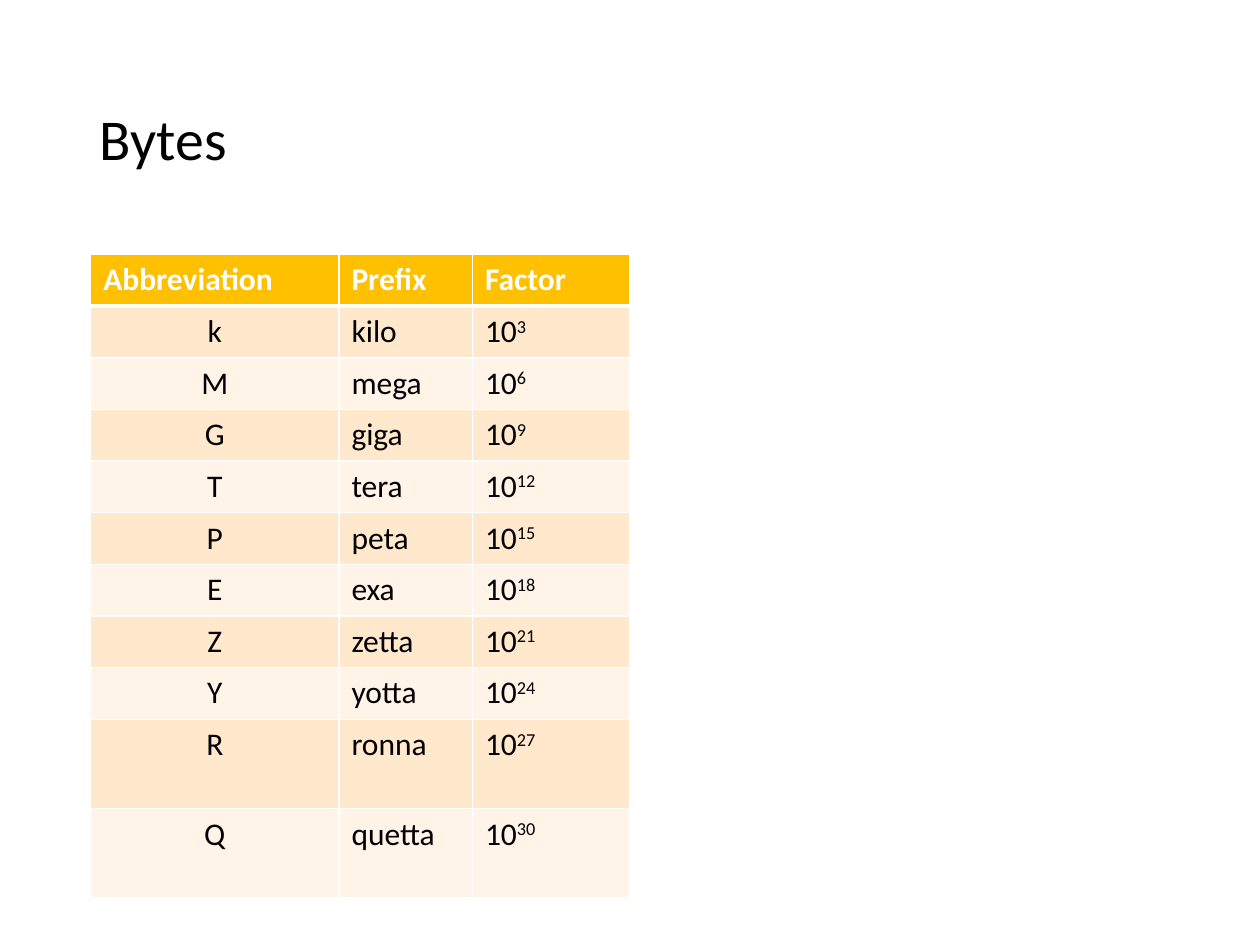
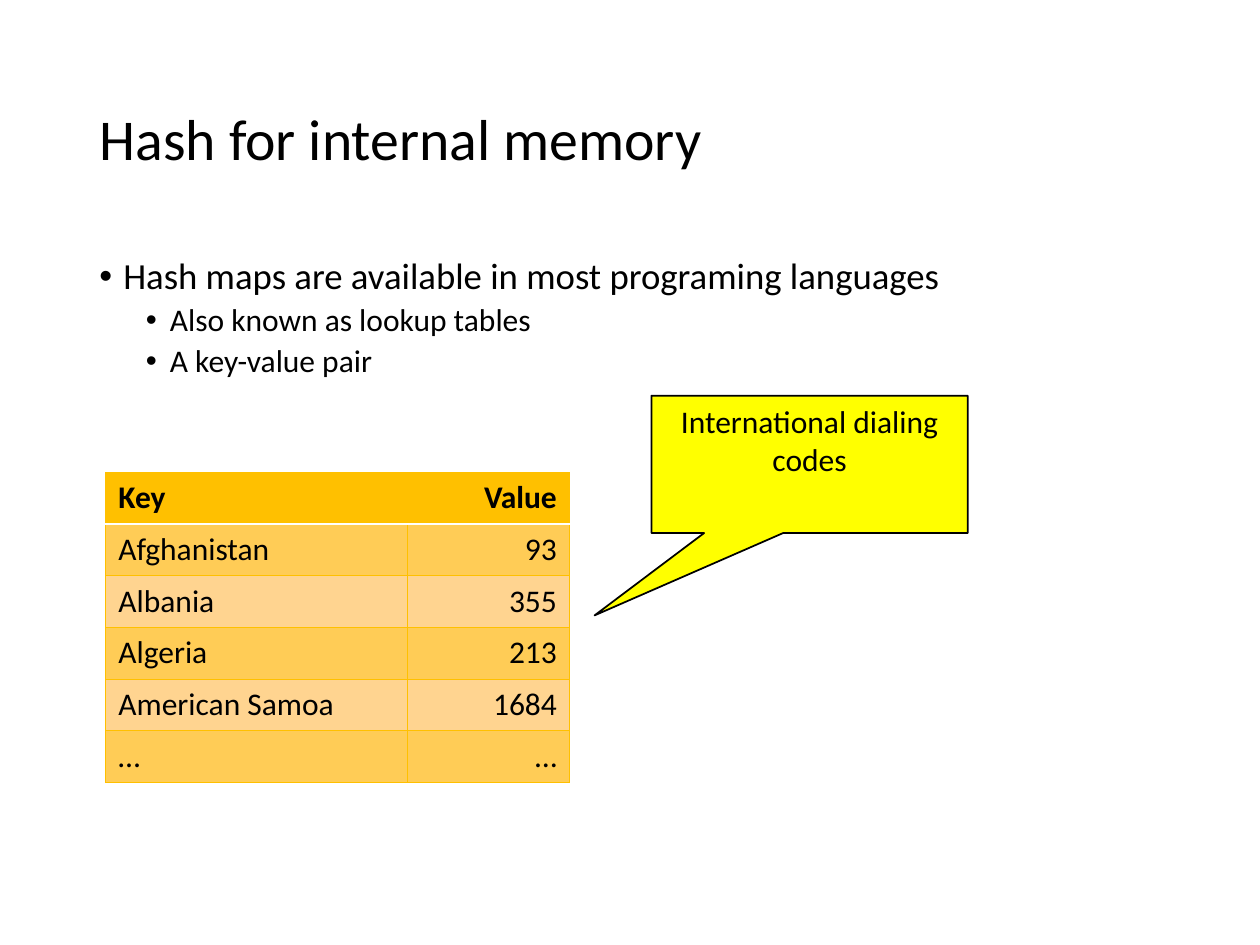
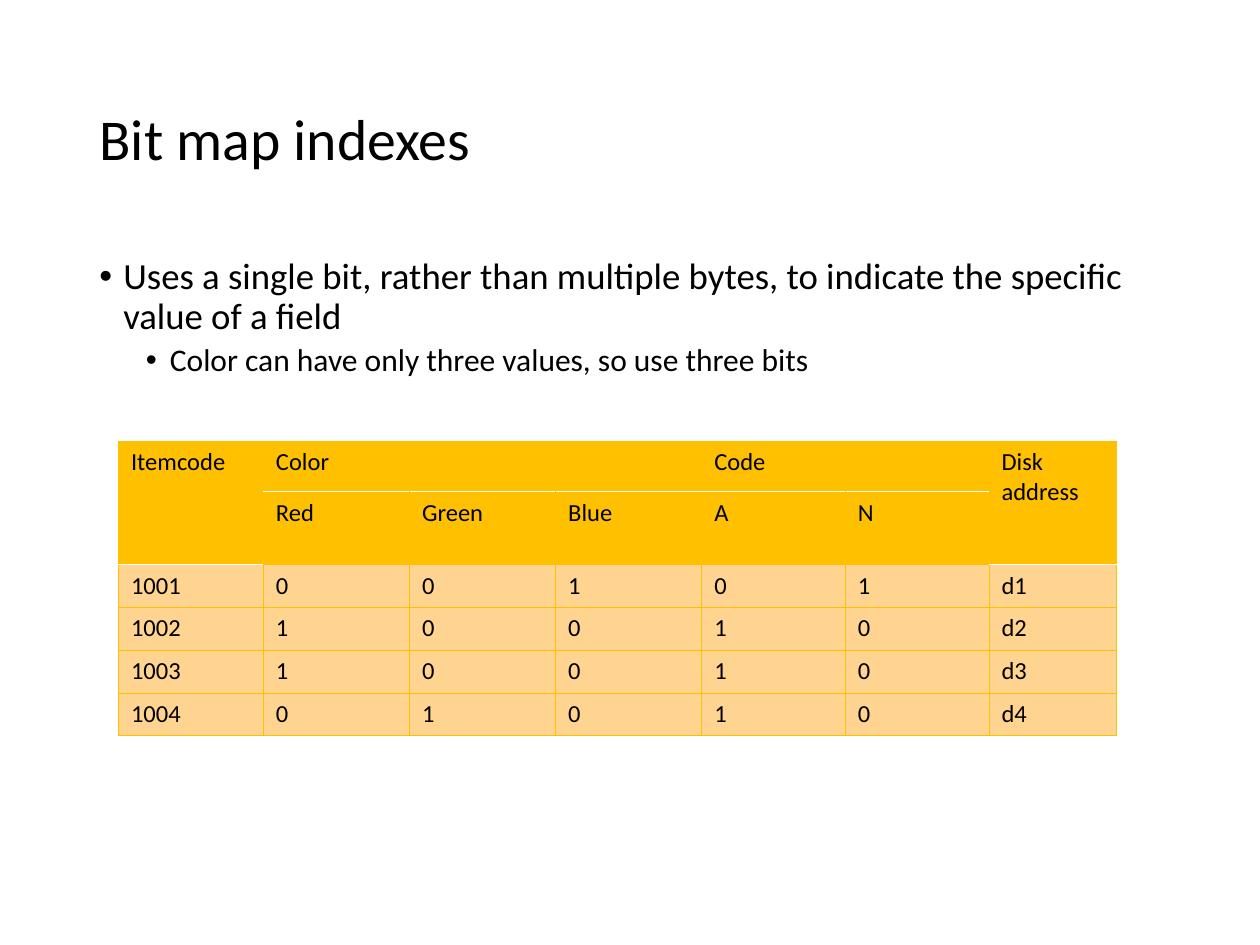
"""Build three slides on byte prefixes, hash maps and bit map indexes."""
import lxml.etree
import pptx
import pptx.dml.color
import pptx.enum.shapes
import pptx.enum.text
import pptx.oxml.ns
import pptx.util

Inches = pptx.util.Inches
Pt = pptx.util.Pt
RGBColor = pptx.dml.color.RGBColor
qn = pptx.oxml.ns.qn

FONT = "Calibri"
BLACK = RGBColor(0x00, 0x00, 0x00)
WHITE = RGBColor(0xFF, 0xFF, 0xFF)
YELLOW = RGBColor(0xFF, 0xFF, 0x00)
GOLD = RGBColor(0xFF, 0xC0, 0x00)
GOLD_BAND = RGBColor(0xFF, 0xCC, 0x56)
GOLD_TINT = RGBColor(0xFF, 0xD4, 0x90)
PEACH = RGBColor(0xFF, 0xE8, 0xCC)
PEACH_TINT = RGBColor(0xFF, 0xF4, 0xE7)

LEFT = pptx.enum.text.PP_ALIGN.LEFT
CENTER = pptx.enum.text.PP_ALIGN.CENTER
RIGHT = pptx.enum.text.PP_ALIGN.RIGHT

PREFIXES = ["kilo", "mega", "giga", "tera", "peta", "exa", "zetta", "yotta", "ronna", "quetta"]
SYMBOLS = "kMGTPEZYRQ"

SLIDES = [
    {
        "title": "Bytes",
        "bullets": [],
        "position": (0.72, 2.02),
        "widths": [1.97, 1.06, 1.25],
        "heights": [0.41] * 9 + [0.71] * 2,
        "rows": [["Abbreviation", "Prefix", "Factor"]]
        + [[symbol, prefix, f"10^{3 * power}"]
           for power, (symbol, prefix) in enumerate(zip(SYMBOLS, PREFIXES), 1)],
        "size": 18,
        "header_rows": 1,
        "header_color": WHITE,
        "header_bold": True,
        "header_alignments": [LEFT] * 3,
        "alignments": [CENTER, LEFT, LEFT],
        "bands": [PEACH, PEACH_TINT],
        "edge": (WHITE, 1),
        "rule": (WHITE, 3),
        "ruled_cells": [(0, column) for column in range(3)],
        "merges": [],
    },
    {
        "title": "Hash for internal memory",
        "bullets": [
            (0, "Hash maps are available in most programing languages"),
            (1, "Also known as lookup tables"),
            (1, "A key-value pair"),
        ],
        "position": (0.84, 3.75),
        "widths": [2.39, 1.29],
        "heights": [0.41] * 6,
        "rows": [
            ["Key", "Value"],
            ["Afghanistan", "93"],
            ["Albania", "355"],
            ["Algeria", "213"],
            ["American Samoa", "1684"],
            ["…", "…"],
        ],
        "size": 18,
        "header_rows": 1,
        "header_color": BLACK,
        "header_bold": True,
        "header_alignments": [LEFT, RIGHT],
        "alignments": [LEFT, RIGHT],
        "bands": [GOLD_BAND, GOLD_TINT],
        "edge": (GOLD, 0.5),
        "rule": (WHITE, 1),
        "ruled_cells": [(0, 0), (0, 1)],
        "merges": [],
    },
    {
        "title": "Bit map indexes",
        "bullets": [
            (0, "Uses a single bit, rather than multiple bytes, to indicate "
                "the specific value of a field"),
            (1, "Color can have only three values, so use three bits"),
        ],
        "position": (0.94, 3.5),
        "widths": [1.15, 1.16, 1.16, 1.16, 1.14, 1.14, 1.01],
        "heights": [0.4, 0.58] + [0.34] * 4,
        "rows": [
            ["Itemcode", "Color", "", "", "Code", "", "Disk address"],
            ["", "Red", "Green", "Blue", "A", "N", ""],
            ["1001", "0", "0", "1", "0", "1", "d1"],
            ["1002", "1", "0", "0", "1", "0", "d2"],
            ["1003", "1", "0", "0", "1", "0", "d3"],
            ["1004", "0", "1", "0", "1", "0", "d4"],
        ],
        "size": 14,
        "header_rows": 2,
        "header_color": BLACK,
        "header_bold": False,
        "header_alignments": [LEFT] * 7,
        "alignments": [LEFT] * 7,
        "bands": [GOLD_TINT],
        "edge": (GOLD, 0.5),
        "rule": (WHITE, 1),
        "ruled_cells": [(0, column) for column in range(7)] + [(1, 0), (1, 6)],
        "merges": [((0, 0), (1, 0)), ((0, 1), (0, 3)), ((0, 4), (0, 5)), ((0, 6), (1, 6))],
    },
]


def add_run(paragraph, text, size, color=BLACK, bold=False):
    run = paragraph.add_run()
    run.text = text
    run.font.name = FONT
    run.font.size = Pt(size)
    run.font.bold = bold
    run.font.color.rgb = color
    return run


def add_border(cell, side, color, width):
    properties = cell._tc.get_or_add_tcPr()
    line = lxml.etree.SubElement(properties, qn(f"a:ln{side}"), w=str(Pt(width)))
    fill = lxml.etree.SubElement(line, qn("a:solidFill"))
    lxml.etree.SubElement(fill, qn("a:srgbClr"), val=str(color))


presentation = pptx.Presentation()
presentation.slide_width = Inches(10)
presentation.slide_height = Inches(7.5)

for content in SLIDES:
    slide = presentation.slides.add_slide(presentation.slide_layouts[5])
    title = slide.shapes.title
    title.left, title.top = Inches(0.69), Inches(0.4)
    title.width, title.height = Inches(8.62), Inches(1.45)
    title.text_frame.auto_size = pptx.enum.text.MSO_AUTO_SIZE.NONE
    title.text_frame.vertical_anchor = pptx.enum.text.MSO_ANCHOR.MIDDLE
    paragraph = title.text_frame.paragraphs[0]
    paragraph.alignment = LEFT
    paragraph.line_spacing = 0.9
    add_run(paragraph, content["title"], 33)

    if content["bullets"]:
        body = slide.shapes.add_textbox(Inches(0.69), Inches(2), Inches(8.62), Inches(4.76))
        body.text_frame.word_wrap = True
        for index, (level, text) in enumerate(content["bullets"]):
            paragraph = body.text_frame.add_paragraph() if index else body.text_frame.paragraphs[0]
            paragraph.level = level
            paragraph.line_spacing = 0.9
            paragraph.space_before = Pt([7.5, 3.8][level])
            properties = paragraph._p.get_or_add_pPr()
            properties.set("marL", str(Inches([0.19, 0.56][level])))
            properties.set("indent", str(Inches(-0.19)))
            lxml.etree.SubElement(properties, qn("a:buFont"), typeface="Arial")
            lxml.etree.SubElement(properties, qn("a:buChar"), char="•")
            add_run(paragraph, text, [21, 18][level])

    rows, widths, heights = content["rows"], content["widths"], content["heights"]
    left, top = content["position"]
    table = slide.shapes.add_table(
        len(rows), len(widths), Inches(left), Inches(top),
        Inches(sum(widths)), Inches(sum(heights))).table
    table.first_row = False
    table.horz_banding = False
    for column, width in zip(table.columns, widths):
        column.width = Inches(width)
    for table_row, height in zip(table.rows, heights):
        table_row.height = Inches(height)

    for row_index, row in enumerate(rows):
        body_index = row_index - content["header_rows"]
        is_header = body_index < 0
        for column_index, text in enumerate(row):
            cell = table.cell(row_index, column_index)
            borders = dict.fromkeys("LRTB", content["edge"])
            if (row_index - 1, column_index) in content["ruled_cells"]:
                borders["T"] = content["rule"]
            if (row_index, column_index) in content["ruled_cells"]:
                borders["B"] = content["rule"]
            for side, (color, width) in borders.items():
                add_border(cell, side, color, width)
            bands = content["bands"]
            cell.fill.solid()
            cell.fill.fore_color.rgb = GOLD if is_header else bands[body_index % len(bands)]
            if not text:
                continue
            paragraph = cell.text_frame.paragraphs[0]
            alignments = content["header_alignments" if is_header else "alignments"]
            paragraph.alignment = alignments[column_index]
            base, _, exponent = text.partition("^")
            add_run(paragraph, base, content["size"],
                    content["header_color"] if is_header else BLACK,
                    is_header and content["header_bold"])
            if exponent:
                superscript = add_run(paragraph, exponent, content["size"])
                superscript.font._element.set("baseline", "30000")

    for first, last in content["merges"]:
        table.cell(*first).merge(table.cell(*last))

callout = presentation.slides[1].shapes.add_shape(
    pptx.enum.shapes.MSO_SHAPE.RECTANGULAR_CALLOUT,
    Inches(5.17), Inches(3.14), Inches(2.51), Inches(1.09))
callout.adjustments[0] = -0.68
callout.adjustments[1] = 1.1
callout.shadow.inherit = False
callout.fill.solid()
callout.fill.fore_color.rgb = YELLOW
callout.line.color.rgb = BLACK
callout.line.width = Pt(1)
callout.text_frame.word_wrap = True
callout.text_frame.vertical_anchor = pptx.enum.text.MSO_ANCHOR.TOP
paragraph = callout.text_frame.paragraphs[0]
paragraph.alignment = CENTER
add_run(paragraph, "International dialing codes", 18)

presentation.save("out.pptx")
